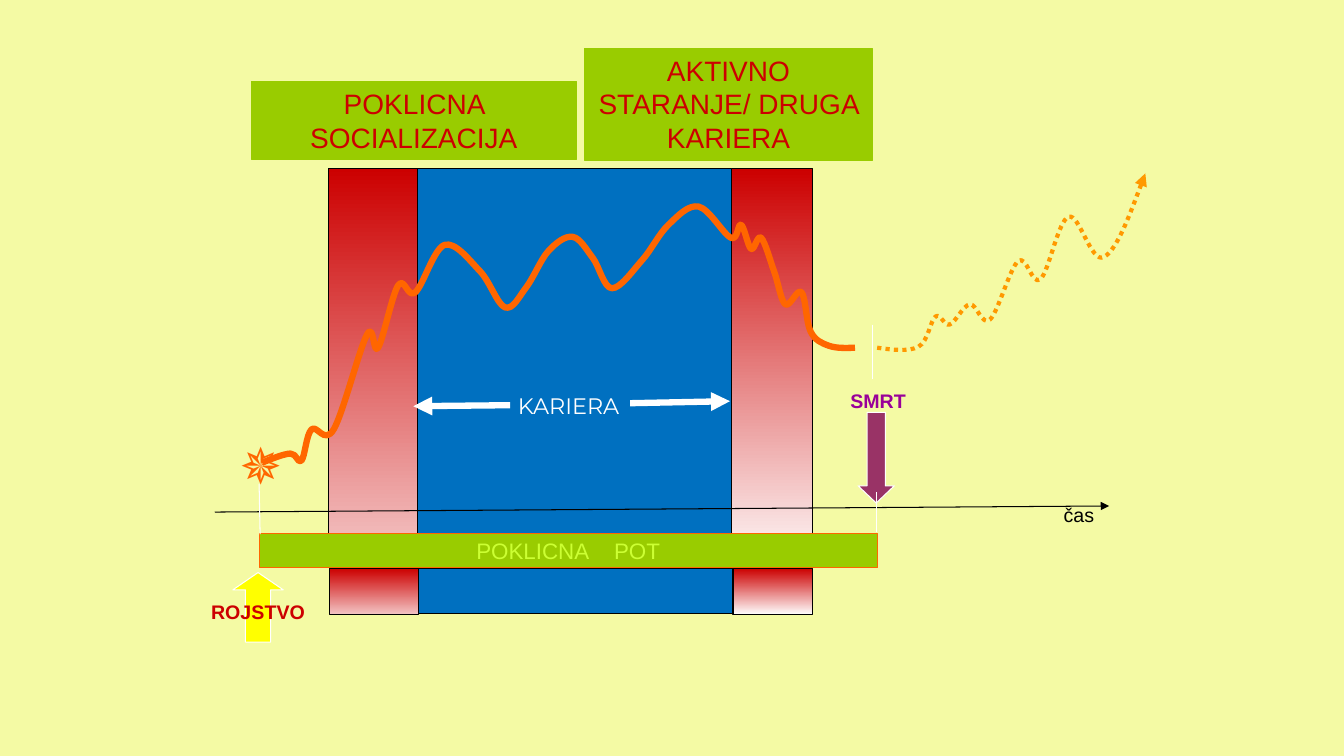
import pptx
import pptx.util
import pptx.dml.color
import pptx.enum.dml
import pptx.enum.shapes
import pptx.enum.text
import pptx.oxml
import pptx.oxml.ns

Inches = pptx.util.Inches
Kind = pptx.enum.shapes.MSO_SHAPE
Anchor = pptx.enum.text.MSO_ANCHOR
qn = pptx.oxml.ns.qn

# Content: career blocks as left, top, width, height, fill (a pair is a gradient)
BLOCKS = [
    (4.11, 5.64, 3.16, 0.45, "0070C0"),
    (7.26, 1.67, 0.8, 3.63, ("CC0000", "FAE5E5")),
    (3.26, 1.67, 0.88, 3.63, ("CC0000", "F1B8B8")),
    (4.14, 1.67, 3.12, 3.63, "0070C0"),
    (3.27, 5.64, 0.88, 0.46, ("CC0000", "F3C5C5")),
    (7.27, 5.64, 0.79, 0.46, ("CC0000", "FFFFFF")),
]

# Knots of the smooth curves
AFTER = [
    (8.7, 3.45), (9.11, 3.44), (9.28, 3.14), (9.42, 3.22), (9.62, 3.02),
    (9.82, 3.17), (10.1, 2.59), (10.32, 2.77), (10.6, 2.15), (10.95, 2.55),
    (11.36, 1.72),
]
LIFE = [
    (2.6, 4.59), (2.88, 4.5), (2.99, 4.57), (3.09, 4.26), (3.31, 4.26),
    (3.64, 3.32), (3.75, 3.45), (3.95, 2.83), (4.12, 2.9), (4.41, 2.43),
    (4.76, 2.69), (5.01, 3.05), (5.22, 2.85), (5.44, 2.49), (5.68, 2.35),
    (5.88, 2.56), (6.07, 2.86), (6.37, 2.58), (6.63, 2.23), (6.93, 2.05),
    (7.25, 2.36), (7.35, 2.23), (7.45, 2.47), (7.55, 2.36), (7.68, 2.7),
    (7.79, 3.02), (7.95, 2.9), (8.04, 3.29), (8.22, 3.43), (8.48, 3.45),
]

# Lines: from, to, colour, points, arrowhead
AXIS = ((2.13, 5.08), (11, 5.02), "000000", 0.75, True)
MARKS = [
    ((2.57, 4.8), (2.58, 5.3), "FFFFFF", 0.75, False),
    ((8.69, 5.28), (8.69, 4.88), "FFFFFF", 0.75, False),
    ((8.65, 3.22), (8.65, 3.76), "FFFFFF", 0.75, False),
    ((5.06, 4.02), (4.1, 4.03), "FFFFFF", 4.5, True),
    ((6.25, 4), (7.24, 3.98), "FFFFFF", 4.5, True),
]

# Labels: box, text, size, colour, font, bold, wrap
LABELS = [
    ((10.42, 4.94, 0.56, 0.34), "čas", 14, "000000", "Arial", False, True),
    ((4.81, 3.84, 1.66, 0.37), "KARIERA", 16, "FFFFFF", "Montserrat", False, True),
    ((8.33, 3.81, 0.76, 0.34), "SMRT", 14, "990099", "Arial", True, False),
    ((2.26, 4.26, 0.65, 0.71), "✵", 36, "FF6600", "Arial", False, False),
]
HEADS = [
    ((2.49, 0.81, 3.23, 0.77), "POKLICNA SOCIALIZACIJA"),
    ((5.8, 0.48, 2.85, 1.11), "AKTIVNO STARANJE/ DRUGA KARIERA"),
]


def rgb(code):
    return pptx.dml.color.RGBColor.from_string(code)


def stroke(line, color, width, arrow=False):
    line.color.rgb = rgb(color)
    line.width = pptx.util.Pt(width)
    if arrow:
        end = pptx.oxml.parse_xml(
            '<a:tailEnd %s type="triangle"/>' % pptx.oxml.ns.nsdecls("a"))
        line._get_or_add_ln().append(end)


def block(slide, kind, box, fill, edge):
    shape = slide.shapes.add_shape(kind, *map(Inches, box))
    shape.shadow.inherit = False
    if isinstance(fill, tuple):
        shape.fill.gradient()
        shape.fill.gradient_angle = 270
        for stop, code in zip(shape.fill.gradient_stops, fill):
            stop.color.rgb = rgb(code)
    else:
        shape.fill.solid()
        shape.fill.fore_color.rgb = rgb(fill)
    stroke(shape.line, edge, 0.75)
    return shape


def write(shape, text, size, color, font="Arial", bold=False, wrap=True,
          anchor=Anchor.TOP, grow=True):
    frame = shape.text_frame
    frame.text = text
    frame.word_wrap = wrap
    frame.vertical_anchor = anchor
    if grow:
        frame.auto_size = pptx.enum.text.MSO_AUTO_SIZE.SHAPE_TO_FIT_TEXT
    par = frame.paragraphs[0]
    par.alignment = pptx.enum.text.PP_ALIGN.CENTER
    style(par.runs[0], size, color, font, bold)
    return par


def style(run, size, color, font="Arial", bold=False):
    run.font.size = pptx.util.Pt(size)
    run.font.name = font
    run.font.bold = bold
    run.font.color.rgb = rgb(color)


def join(slide, start, end, color, width, arrow):
    line = slide.shapes.add_connector(
        pptx.enum.shapes.MSO_CONNECTOR.STRAIGHT, *map(Inches, start + end))
    stroke(line.line, color, width, arrow)
    line._element.spPr.append(pptx.oxml.parse_xml(
        "<a:effectLst %s/>" % pptx.oxml.ns.nsdecls("a")))


def bend(knots):
    """Control points of a spline: each tangent follows the two neighbours."""
    pairs = []
    last = len(knots) - 1
    for i in range(last):
        a, b = knots[i], knots[i + 1]
        one = two = None
        if i > 0:
            one = [p + (n - q) / 6 for p, n, q in zip(a, b, knots[i - 1])]
        if i + 1 < last:
            two = [p - (n - q) / 6 for p, n, q in zip(b, knots[i + 2], a)]
        one = one or [(p + q) / 2 for p, q in zip(a, two)]
        two = two or [(p + q) / 2 for p, q in zip(b, one)]
        pairs.append((one, two, b))
    return pairs


def curve(slide, knots, color, width, arrow=False, dash=None):
    spots = [tuple(map(Inches, knot)) for knot in knots]
    build = slide.shapes.build_freeform(*spots[0])
    build.add_line_segments(spots[1:], close=False)
    shape = build.convert_to_shape()
    shape.shadow.inherit = False
    shape.fill.background()
    stroke(shape.line, color, width)
    if dash:
        shape.line.dash_style = dash
    if arrow:
        stroke(shape.line, color, width, True)
    # Turn each straight step into a cubic one
    left, top = shape.left, shape.top
    steps = list(shape._element.iter(qn("a:lnTo")))
    for step, points in zip(steps, bend(spots)):
        dots = "".join('<a:pt x="%d" y="%d"/>' % (x - left, y - top)
                       for x, y in points)
        cubic = pptx.oxml.parse_xml("<a:cubicBezTo %s>%s</a:cubicBezTo>" % (
            pptx.oxml.ns.nsdecls("a"), dots))
        step.getparent().replace(step, cubic)


def main():
    deck = pptx.Presentation()
    deck.slide_width, deck.slide_height = Inches(13.33), Inches(7.5)
    slide = deck.slides.add_slide(deck.slide_layouts[6])
    slide.background.fill.solid()
    slide.background.fill.fore_color.rgb = rgb("F4FAA4")

    # Career stages, curves and time axis
    for *box, fill in BLOCKS:
        block(slide, Kind.RECTANGLE, box, fill, "000000")
    curve(slide, AFTER, "FF9900", 3, True, pptx.enum.dml.MSO_LINE.ROUND_DOT)
    curve(slide, LIFE, "FF6600", 4.5)
    join(slide, *AXIS)

    # Career path bar, with a wide gap between its words
    bar = block(slide, Kind.RECTANGLE, (2.57, 5.29, 6.13, 0.34), "99CC00", "FF6600")
    par = write(bar, "POKLICNA", 16, "CCFF33", wrap=False,
                anchor=Anchor.MIDDLE, grow=False)
    for word in (" ", "POT"):
        run = par.add_run()
        run.text = word
        style(run, 16, "CCFF33")
    par.runs[1].font._element.set("spc", "1330")

    # Birth and death arrows
    birth = block(slide, Kind.UP_ARROW, (2.31, 5.68, 0.5, 0.69), "FFFF00", "FFFFFF")
    birth.adjustments[1] = 0.344
    write(birth, "ROJSTVO", 14, "CC0000", bold=True, wrap=False,
          anchor=Anchor.MIDDLE, grow=False)
    death = block(slide, Kind.UP_ARROW, (8.51, 4.09, 0.36, 0.9), "993366", "FFFFFF")
    death.adjustments[1] = 0.475
    death.rotation = 180

    # Marks, labels and headings
    for mark in MARKS:
        join(slide, *mark)
    for box, *rest in LABELS:
        write(slide.shapes.add_textbox(*map(Inches, box)), *rest)
    for box, text in HEADS:
        head = block(slide, Kind.RECTANGLE, box, "99CC00", "99CC00")
        write(head, text, 20, "CC0000")

    deck.save("out.pptx")


if __name__ == "__main__":
    main()
